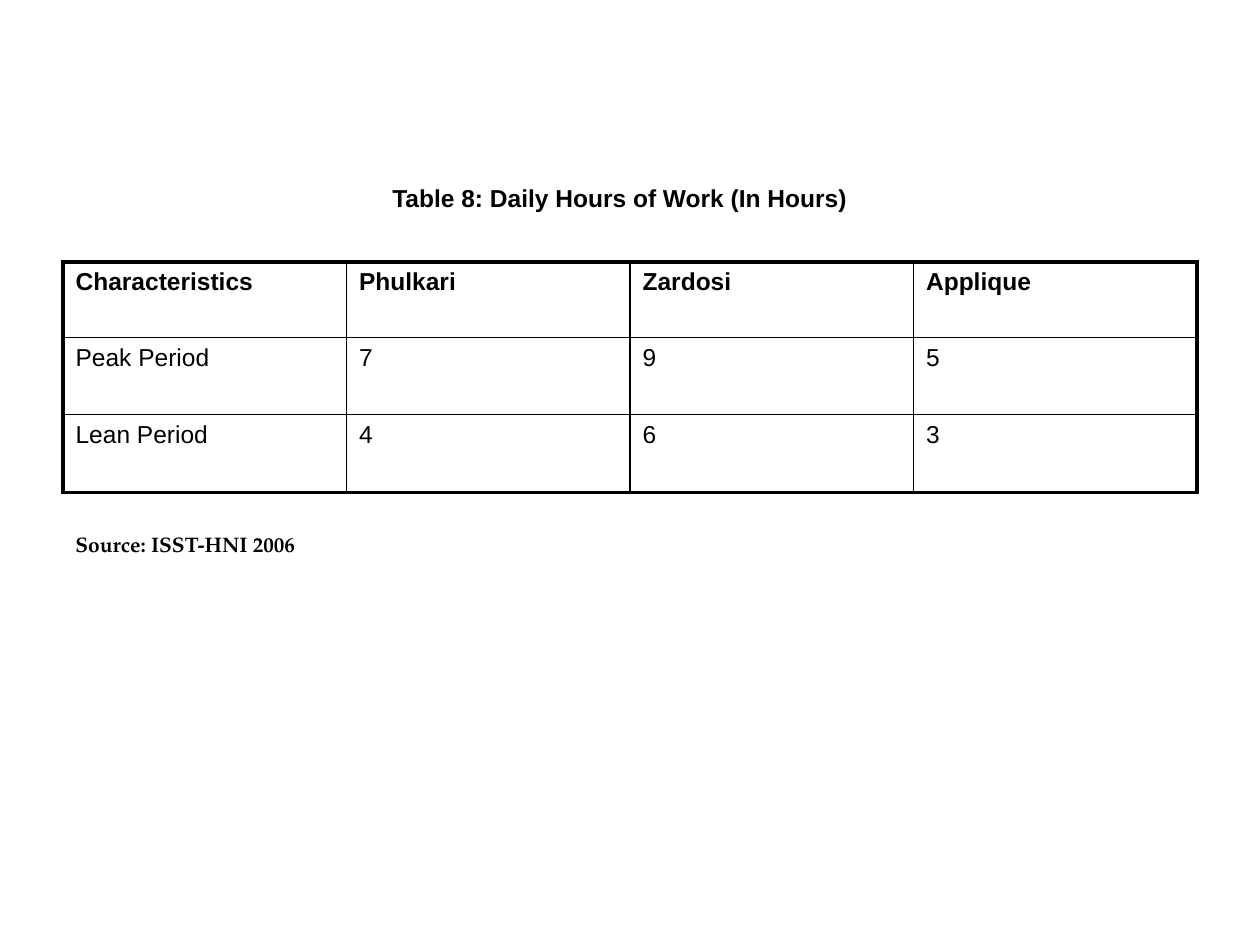
from lxml import etree
from pptx import Presentation
from pptx.dml.color import RGBColor
from pptx.enum.text import MSO_ANCHOR, PP_ALIGN
from pptx.oxml.ns import qn
from pptx.util import Inches, Pt

TOP = MSO_ANCHOR.TOP
LEFT, CENTER = PP_ALIGN.LEFT, PP_ALIGN.CENTER

TITLE = "Table 8: Daily Hours of Work (In Hours)"
ROWS = [
    ("Characteristics", "Phulkari", "Zardosi", "Applique"),
    ("Peak Period", "7", "9", "5"),
    ("Lean Period", "4", "6", "3"),
]
SOURCE = "Source: ISST-HNI 2006"

INK = "000000"
MARGIN, WIDTH = 0.5, 9
TABLE_TOP = 2.08
ROW_HEIGHTS = (0.6, 0.61, 0.62)
OUTER, INNER = 2.25, 1


def rgb(value):
    return RGBColor.from_string(value)


def write(tf, text, size, bold, font="Arial", align=LEFT):
    tf.text = text
    p = tf.paragraphs[0]
    p.alignment = align
    f = p.runs[0].font
    f.name, f.size, f.bold = font, Pt(size), bold
    f.color.rgb = rgb(INK)


def add_text(slide, box, wrap):
    tf = slide.shapes.add_textbox(*map(Inches, box)).text_frame
    tf.word_wrap = wrap
    tf.vertical_anchor = TOP
    return tf


def set_borders(cell, widths):
    """Draw the left, right, top and bottom cell borders, ahead of the fill."""
    tc_pr = cell._tc.get_or_add_tcPr()
    for i, (side, width) in enumerate(zip("LRTB", widths)):
        ln = etree.Element(qn(f"a:ln{side}"), w=str(Pt(width)))
        fill = etree.SubElement(ln, qn("a:solidFill"))
        etree.SubElement(fill, qn("a:srgbClr"), val=INK)
        tc_pr.insert(i, ln)


def add_hours_table(slide):
    n_rows, n_cols = len(ROWS), len(ROWS[0])
    table = slide.shapes.add_table(
        n_rows, n_cols, Inches(MARGIN), Inches(TABLE_TOP),
        Inches(WIDTH), Inches(sum(ROW_HEIGHTS))).table
    table.horz_banding = False
    for col in table.columns:
        col.width = Inches(WIDTH / n_cols)
    for r, values in enumerate(ROWS):
        table.rows[r].height = Inches(ROW_HEIGHTS[r])
        for c, value in enumerate(values):
            cell = table.cell(r, c)
            cell.fill.background()
            write(cell.text_frame, value, 14, r == 0)
            on_edge = (c == 0, c == n_cols - 1, r == 0, r == n_rows - 1)
            set_borders(cell, [OUTER if edge else INNER for edge in on_edge])


prs = Presentation()
prs.slide_width, prs.slide_height = Inches(10), Inches(7.5)
slide = prs.slides.add_slide(prs.slide_layouts[6])

tf = add_text(slide, (MARGIN, 1.25, WIDTH, 0.3), True)
tf.margin_top, tf.margin_right = Inches(0.2), Inches(0.26)
write(tf, TITLE, 14, True, align=CENTER)

add_hours_table(slide)

tf = add_text(slide, (MARGIN, 4.17, 1.95, 0.3), False)
write(tf, SOURCE, 12, True, "TeX Gyre Pagella")

prs.save("out.pptx")
